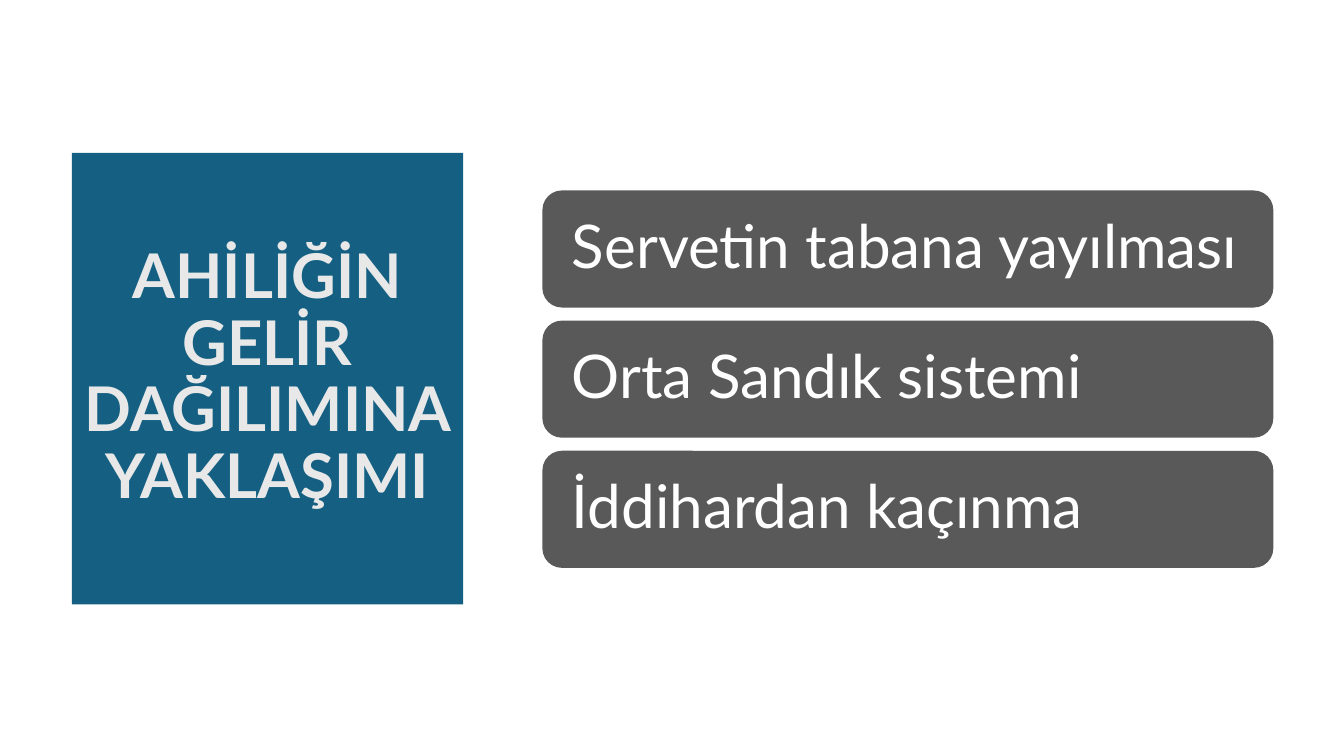
from dataclasses import dataclass

from pptx import Presentation
from pptx import util as u
from pptx.dml import color
from pptx.enum import shapes, text


@dataclass(frozen=True)
class Theme:
    font: str = "Lato"
    blue: str = "156082"
    gray: str = "595959"
    pale: str = "E8E8E8"
    white: str = "FFFFFF"
    head: int = 44
    item: int = 43


THEME = Theme()
TITLE = "AHİLİĞİN GELİR DAĞILIMINA YAKLAŞIMI"
ITEMS = ["Servetin tabana yayılması", "Orta Sandık sistemi", "İddihardan kaçınma"]


def paint(shape, tint):
    shape.fill.solid()
    shape.fill.fore_color.rgb = color.RGBColor.from_string(tint)
    shape.line.fill.background()


def write(shape, words, size, tint, align, bold=False):
    frame = shape.text_frame
    frame.text = words
    frame.word_wrap = True
    frame.auto_size = text.MSO_AUTO_SIZE.NONE
    frame.vertical_anchor = text.MSO_ANCHOR.MIDDLE
    para = frame.paragraphs[0]
    para.alignment = align
    para.line_spacing = 0.9
    for run in para.runs:
        run.font.name = THEME.font
        run.font.size = u.Pt(size)
        run.font.bold = bold
        run.font.color.rgb = color.RGBColor.from_string(tint)


def add_title(slide):
    title = slide.shapes.title
    title.left, title.top = u.Cm(1.81), u.Cm(3.85)
    title.width, title.height = u.Cm(9.86), u.Cm(11.38)
    paint(title, THEME.blue)
    write(title, TITLE, THEME.head, THEME.pale, text.PP_ALIGN.CENTER, bold=True)


def add_card(slide, words, top):
    card = slide.shapes.add_shape(
        shapes.MSO_SHAPE.ROUNDED_RECTANGLE,
        u.Cm(13.67), u.Cm(top), u.Cm(18.42), u.Cm(2.95))
    card.shadow.inherit = False
    paint(card, THEME.gray)
    frame = card.text_frame
    frame.margin_left = frame.margin_right = u.Cm(0.6)
    write(card, words, THEME.item, THEME.white, text.PP_ALIGN.LEFT)


def main():
    deck = Presentation()
    deck.slide_width, deck.slide_height = u.Cm(33.87), u.Cm(19.05)
    slide = deck.slides.add_slide(deck.slide_layouts[5])

    # Title panel
    add_title(slide)

    # Stack of cards at an equal pitch
    first, pitch = 4.8, 3.28
    for row, words in enumerate(ITEMS):
        add_card(slide, words, first + row * pitch)

    deck.save("out.pptx")


if __name__ == "__main__":
    main()
